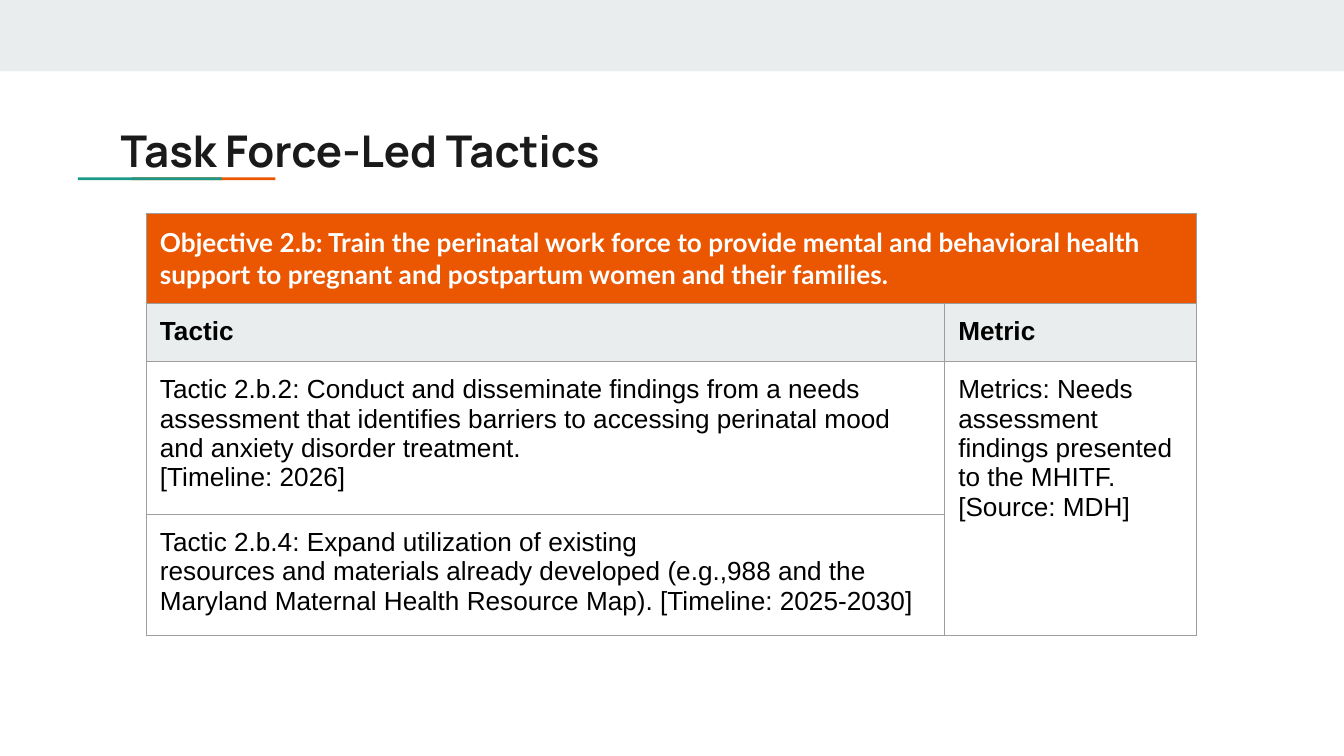
"""Build the slide with the tactics and metric of objective 2.b."""
from dataclasses import dataclass

from lxml.etree import SubElement
from pptx import Presentation
from pptx.dml.color import RGBColor
from pptx.enum.shapes import MSO_SHAPE as Preset
from pptx.enum.text import MSO_ANCHOR as Anchor
from pptx.oxml.ns import qn
from pptx.util import Inches, Pt

ORANGE, TEAL, PALE = "EB5600", "1A9988", "E9EDEE"
WHITE, BLACK, INK, BORDER = "FFFFFF", "000000", "1A1A1A", "9E9E9E"
INSET = Inches(0.1)


@dataclass(frozen=True)
class Bar:
    left: float
    top: float
    width: float
    height: float
    color: str


@dataclass(frozen=True)
class TextStyle:
    font: str
    size: float
    color: str
    bold: bool = False


@dataclass(frozen=True)
class CellContent:
    row: int
    column: int
    paragraphs: tuple[str, ...]
    style: TextStyle
    fill: str | None = None


TITLE = TextStyle("Manrope", 23.4, INK, True)
OBJECTIVE = TextStyle("Lato", 14, WHITE, True)
HEADING = TextStyle("Arial", 14, BLACK, True)
BODY = TextStyle("Arial", 14, BLACK)

BARS = (
    Bar(0, 0, 10, 0.53, PALE),
    Bar(0.98, 1.32, 1.07, 0.02, ORANGE),
    Bar(0.58, 1.32, 1.07, 0.02, TEAL),
)
COLUMN_WIDTHS = (5.94, 1.87)
ROW_COUNT, ROW_HEIGHT = 4, 0.42
CELLS = (
    CellContent(0, 0, (
        "Objective 2.b: Train the perinatal work force to provide mental and behavioral "
        "health support to pregnant and postpartum women and their families.",
    ), OBJECTIVE, ORANGE),
    CellContent(1, 0, ("Tactic",), HEADING, PALE),
    CellContent(1, 1, ("Metric",), HEADING, PALE),
    CellContent(2, 0, (
        "Tactic 2.b.2: Conduct and disseminate findings from a needs assessment that "
        "identifies barriers to accessing perinatal mood and anxiety disorder treatment.",
        "[Timeline: 2026]",
    ), BODY),
    CellContent(2, 1, (
        "Metrics: Needs assessment findings presented to the MHITF. [Source: MDH]",
    ), BODY),
    CellContent(3, 0, (
        "Tactic 2.b.4: Expand utilization of existing",
        "resources and materials already developed (e.g.,988 and the Maryland Maternal "
        "Health Resource Map). [Timeline: 2025-2030]",
    ), BODY),
)


def rgb(color: str) -> RGBColor:
    return RGBColor.from_string(color)


def draw_bar(slide, bar: Bar) -> None:
    shape = slide.shapes.add_shape(
        Preset.RECTANGLE, Inches(bar.left), Inches(bar.top), Inches(bar.width), Inches(bar.height)
    )
    shape.shadow.inherit = False
    shape.fill.solid()
    shape.fill.fore_color.rgb = rgb(bar.color)
    shape.line.fill.background()


def write_text(frame, paragraphs: tuple[str, ...], style: TextStyle) -> None:
    frame.word_wrap = True
    for index, text in enumerate(paragraphs):
        paragraph = frame.add_paragraph() if index else frame.paragraphs[0]
        run = paragraph.add_run()
        run.text = text
        run.font.name = style.font
        run.font.size = Pt(style.size)
        run.font.bold = style.bold
        run.font.color.rgb = rgb(style.color)


def set_margins(target) -> None:
    target.margin_left = target.margin_right = INSET
    target.margin_top = target.margin_bottom = INSET


def draw_title(slide, text: str) -> None:
    box = slide.shapes.add_textbox(Inches(0.8), Inches(0.82), Inches(8.41), Inches(0.59))
    set_margins(box.text_frame)
    box.text_frame.vertical_anchor = Anchor.MIDDLE
    write_text(box.text_frame, (text,), TITLE)


def add_borders(cell) -> None:
    properties = cell._tc.get_or_add_tcPr()
    for position, side in enumerate(("a:lnL", "a:lnR", "a:lnT", "a:lnB")):
        line = SubElement(properties, qn(side), w=str(Pt(0.75)))
        fill = SubElement(line, qn("a:solidFill"))
        SubElement(fill, qn("a:srgbClr"), val=BORDER)
        properties.insert(position, line)


def draw_table(slide) -> None:
    table = slide.shapes.add_table(
        ROW_COUNT, len(COLUMN_WIDTHS), Inches(1.09), Inches(1.59),
        Inches(sum(COLUMN_WIDTHS)), Inches(ROW_COUNT * ROW_HEIGHT),
    ).table
    table.first_row = table.horz_banding = False
    for column, width in zip(table.columns, COLUMN_WIDTHS):
        column.width = Inches(width)
    table.cell(0, 0).merge(table.cell(0, 1))
    table.cell(2, 1).merge(table.cell(3, 1))
    for cell in table.iter_cells():
        set_margins(cell)
        cell.fill.background()
        add_borders(cell)
    for content in CELLS:
        cell = table.cell(content.row, content.column)
        if content.fill:
            cell.fill.solid()
            cell.fill.fore_color.rgb = rgb(content.fill)
        write_text(cell.text_frame, content.paragraphs, content.style)


def main() -> None:
    presentation = Presentation()
    presentation.slide_width = Inches(10)
    presentation.slide_height = presentation.slide_width * 9 // 16
    slide = presentation.slides.add_slide(presentation.slide_layouts[6])
    for bar in BARS:
        draw_bar(slide, bar)
    draw_title(slide, "Task Force-Led Tactics")
    draw_table(slide)
    presentation.save("out.pptx")


if __name__ == "__main__":
    main()
